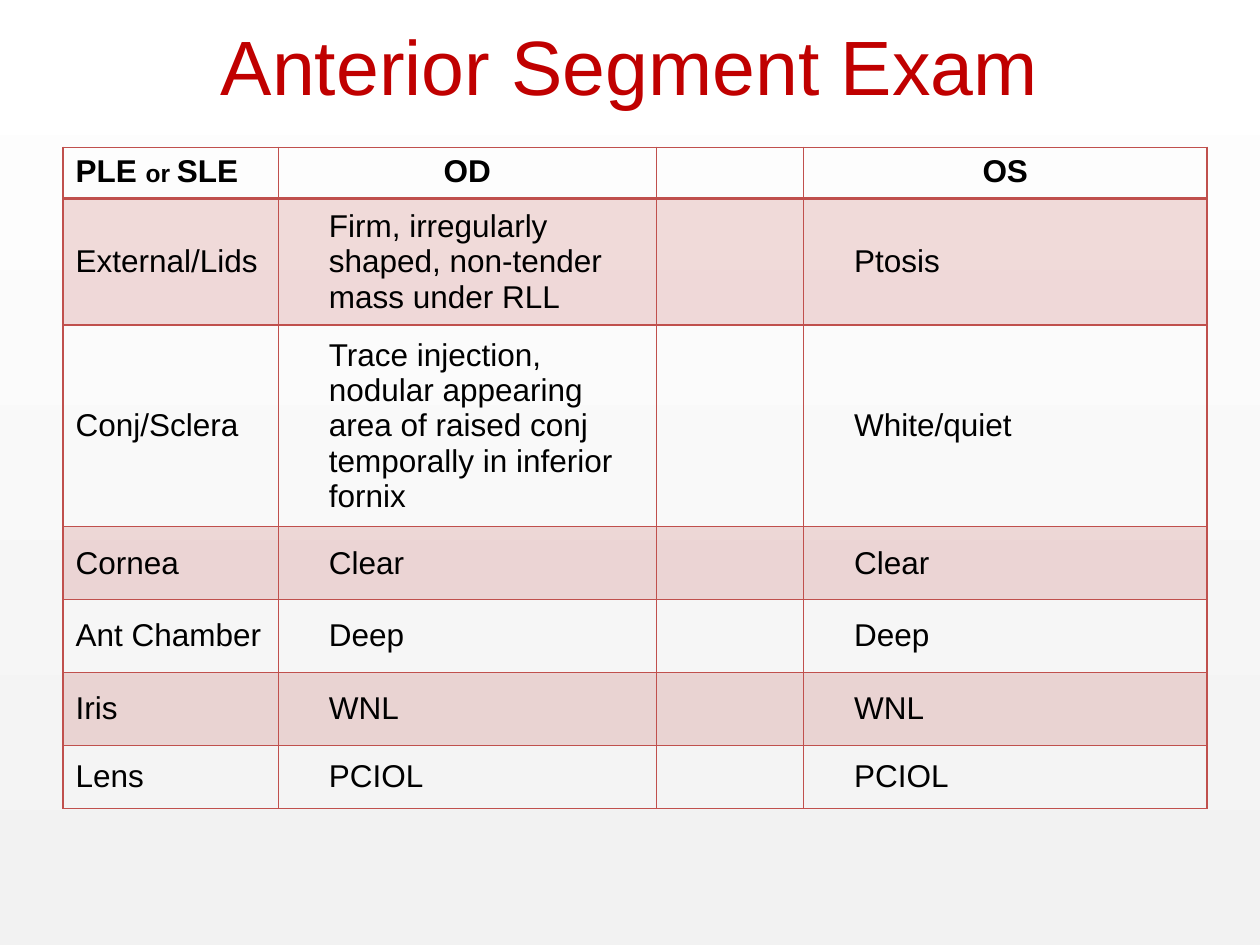
from lxml import etree
from pptx import Presentation
from pptx.dml.color import RGBColor
from pptx.enum.dml import MSO_THEME_COLOR
from pptx.enum.shapes import MSO_SHAPE
from pptx.enum.text import MSO_ANCHOR, PP_ALIGN
from pptx.oxml.ns import qn
from pptx.util import Cm, Pt

CENTER, LEFT = PP_ALIGN.CENTER, PP_ALIGN.LEFT
MIDDLE, TOP = MSO_ANCHOR.MIDDLE, MSO_ANCHOR.TOP
RECT = MSO_SHAPE.RECTANGLE

FONT = "Arial"
RED = "C0504D"
COLS = [4.34, 7.62, 2.97, 8.13]
ROWS = [1.04, 2.38, 3.81, 1.47, 1.47, 1.47, 1.27]
HEAD = [["PLE ", "or ", "SLE"], ["OD"], [], ["OS"]]
EXAM = [
    ("External/Lids", "Firm, irregularly shaped, non-tender mass under RLL", "Ptosis"),
    ("Conj/Sclera", "Trace injection, nodular appearing area of raised conj "
     "temporally in inferior fornix", "White/quiet"),
    ("Cornea", "Clear", "Clear"),
    ("Ant Chamber", "Deep", "Deep"),
    ("Iris", "WNL", "WNL"),
    ("Lens", "PCIOL", "PCIOL"),
]


def color(code):
    return RGBColor.from_string(code)


def style(par, size, code, align=LEFT, bold=False):
    par.alignment = align
    font = par.font
    font.name, font.size, font.bold = FONT, Pt(size), bold
    font.color.rgb = color(code)


def add_back(slide, size):
    back = slide.shapes.add_shape(RECT, 0, 0, *size)
    back.shadow.inherit = False
    back.line.fill.background()
    back.fill.gradient()
    back.fill.gradient_angle = 90
    for stop, place, code in zip(back.fill.gradient_stops, (0, 1), ("F2F2F2", "FFFFFF")):
        stop.position = place
        stop.color.rgb = color(code)


def add_title(slide, text):
    box = slide.shapes.add_textbox(Cm(1.27), Cm(-0.28), Cm(22.86), Cm(3.18))
    frame = box.text_frame
    frame.word_wrap = True
    frame.vertical_anchor = MIDDLE
    par = frame.paragraphs[0]
    par.text = text
    style(par, 44, "C00000", CENTER)


def add_edge(cell, side, width):
    line = etree.SubElement(cell._tc.get_or_add_tcPr(), qn(f"a:ln{side}"), w=str(Pt(width)))
    fill = etree.SubElement(line, qn("a:solidFill"))
    etree.SubElement(fill, qn("a:srgbClr"), val=RED)


def tint(cell, share):
    cell.fill.solid()
    cell.fill.fore_color.rgb = color(RED)
    tone = cell._tc.tcPr.find(f"{qn('a:solidFill')}/{qn('a:srgbClr')}")
    etree.SubElement(tone, qn("a:alpha"), val=str(share * 1000))


def fill_cell(cell, row, col, parts):
    # Borders come before the fill, with a thicker rule under the header
    for side in "LRTB":
        thick = (row, side) in ((0, "B"), (1, "T"))
        add_edge(cell, side, 2 if thick else 1)
    if row % 2:
        tint(cell, 20)
    else:
        cell.fill.background()

    # Text
    cell.vertical_anchor = MIDDLE if row else TOP
    if row and col in (1, 3):
        cell.margin_left = Cm(1.02)
    par = cell.text_frame.paragraphs[0]
    style(par, 18, "000000", LEFT if row or not col else CENTER, row == 0)
    for part in parts:
        run = par.add_run()
        run.text = part
        if part == "or ":
            run.font.size = Pt(14)


def add_grid(slide):
    frame = slide.shapes.add_table(len(ROWS), len(COLS), Cm(1.27), Cm(2.97),
                                   Cm(sum(COLS)), Cm(sum(ROWS)))
    table = frame.table
    table.first_row = table.horz_banding = False
    for col, width in zip(table.columns, COLS):
        col.width = Cm(width)
    for row, height in zip(table.rows, ROWS):
        row.height = Cm(height)
    body = [[[part], [right], [], [left]] for part, right, left in EXAM]
    for row, line in enumerate([HEAD] + body):
        for col, parts in enumerate(line):
            fill_cell(table.cell(row, col), row, col, parts)


def main():
    deck = Presentation()
    size = deck.slide_width, deck.slide_height = Cm(25.4), Cm(19.05)
    slide = deck.slides.add_slide(deck.slide_layouts[6])
    slide.background.fill.solid()
    slide.background.fill.fore_color.theme_color = MSO_THEME_COLOR.BACKGROUND_1
    add_back(slide, size)
    add_title(slide, "Anterior Segment Exam")
    add_grid(slide)
    deck.save("out.pptx")


if __name__ == "__main__":
    main()
